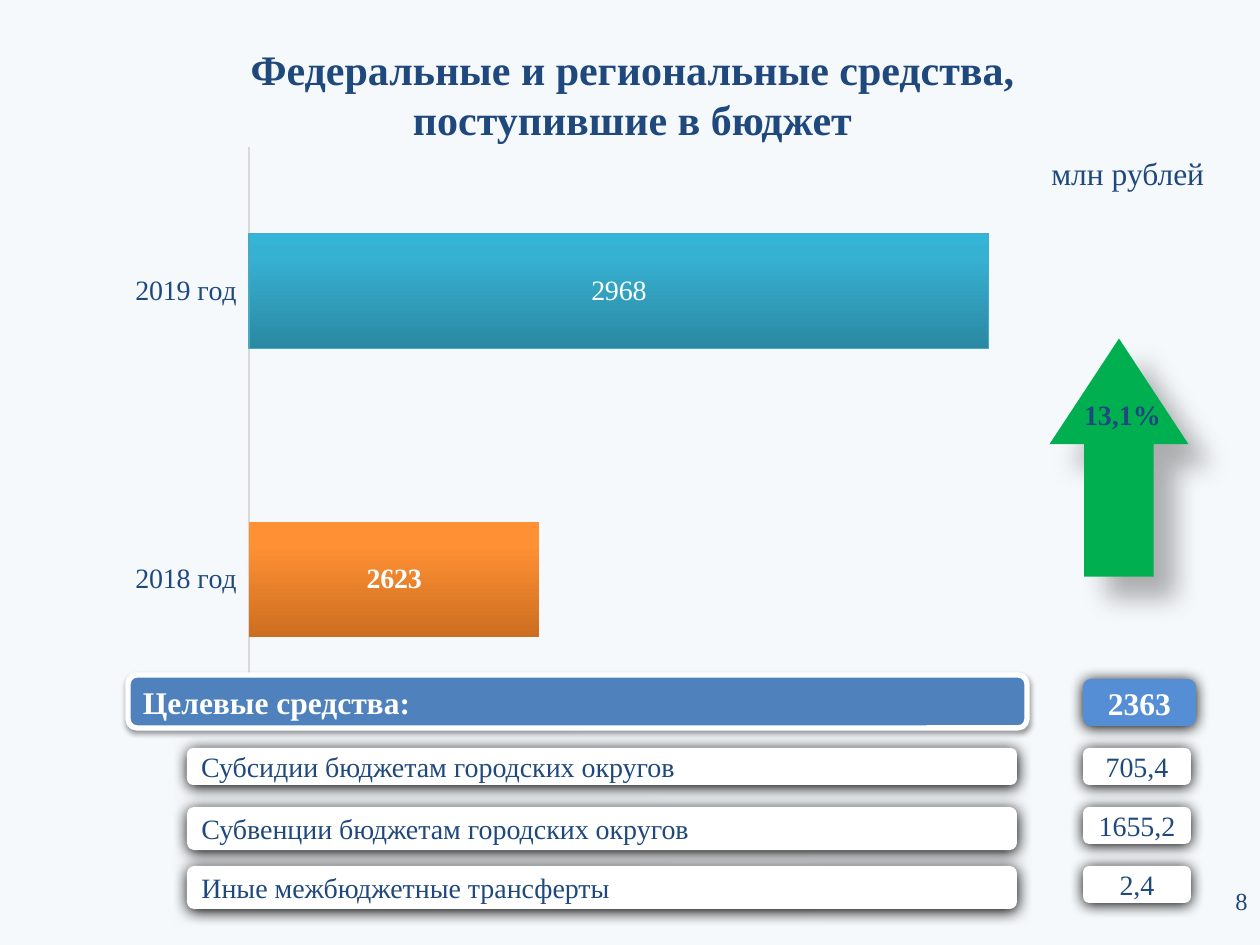
from copy import deepcopy
from dataclasses import dataclass
from typing import NamedTuple, Optional

from lxml.etree import SubElement as Sub
from pptx import Presentation
from pptx.chart.data import CategoryChartData as Data
from pptx.dml.color import RGBColor as Rgb
from pptx.enum.chart import XL_CHART_TYPE as Kind, XL_TICK_LABEL_POSITION as Tick, XL_TICK_MARK as Mark
from pptx.enum.shapes import MSO_SHAPE as Form
from pptx.enum.text import MSO_ANCHOR as Anchor, PP_ALIGN as Align
from pptx.oxml.ns import qn
from pptx.util import Emu, Pt

SCALE = 914400 / 126


@dataclass(frozen=True)
class Theme:
    font: str = "Times New Roman"
    back: str = "F6F9FC"
    navy: str = "1F497D"
    white: str = "FFFFFF"
    blue: str = "4F81BD"
    sky: str = "558ED5"
    green: str = "00B050"
    axis: str = "D9D9D9"
    edge: str = "46AAC5"
    teal: tuple = ("2A88A2", "37B1D2", "34B4D6")
    amber: tuple = ("CC6E20", "FF9034", "FF9136")
    title: int = 24
    head: int = 18
    body: int = 16
    page: int = 14


class Box(NamedTuple):
    left: int
    top: int
    width: int
    height: int


class Shade(NamedTuple):
    alpha: int
    blur: float
    dist: float
    angle: int


class Row(NamedTuple):
    label: str
    value: str
    top: int
    height: int


T = Theme()
SOFT = Shade(38, 3.1, 1.6, 90)
GLOW = Shade(100, 8.5, 1, 90)
DROP = Shade(30, 15, 18, 45)
ROWS = (
    Row("Субсидии бюджетам городских округов", "705,4", 748, 37),
    Row("Субвенции бюджетам городских округов", "1655,2", 807, 43),
    Row("Иные межбюджетные трансферты", "2,4", 866, 43),
)


def px(size: float) -> Emu:
    return Emu(round(size * SCALE))


def place(box: Box) -> list:
    return [px(side) for side in box]


def style(font, size: int, color: str = T.navy, bold: bool = False) -> None:
    font.name, font.size, font.bold = T.font, Pt(size), bold
    font.color.rgb = Rgb.from_string(color)


def write(shape, text: str, *, size: int = T.body, color: str = T.navy,
          bold: bool = False, align=Align.CENTER, anchor=Anchor.MIDDLE,
          space: Optional[float] = None) -> None:
    frame = shape.text_frame
    frame.word_wrap = True
    frame.vertical_anchor = anchor
    for n, line in enumerate(text.split("\n")):
        para = frame.add_paragraph() if n else frame.paragraphs[0]
        para.alignment, para.line_spacing = align, space
        run = para.add_run()
        run.text = line
        style(run.font, size, color, bold)


def label(slide, box: Box, text: str, **form) -> None:
    write(slide.shapes.add_textbox(*place(box)), text, **form)


def cast(shape, shade: Shade) -> None:
    shape.shadow.inherit = False
    root = shape._element.spPr.find(qn("a:effectLst"))
    outer = Sub(root, qn("a:outerShdw"), blurRad=str(Pt(shade.blur)),
                dist=str(Pt(shade.dist)), dir=str(shade.angle * 60000),
                algn="ctr", rotWithShape="0")
    tint = Sub(outer, qn("a:srgbClr"), val="000000")
    Sub(tint, qn("a:alpha"), val=str(shade.alpha * 1000))


def draw(slide, box: Box, fill: str, shade: Shade, form=Form.ROUNDED_RECTANGLE):
    shape = slide.shapes.add_shape(form, *place(box))
    shape.fill.solid()
    shape.fill.fore_color.rgb = Rgb.from_string(fill)
    shape.line.fill.background()
    cast(shape, shade)
    return shape


def blend(series, tones: tuple) -> None:
    fill = series.format.fill
    fill.gradient()
    fill.gradient_angle = 90
    stops = series._element.find(".//" + qn("a:gsLst"))
    stops.append(deepcopy(stops[-1]))
    for stop, spot, tone in zip(fill.gradient_stops, (0, 0.8, 1), tones):
        stop.position = spot
        stop.color.rgb = Rgb.from_string(tone)


def fix(chart, **parts: float) -> None:
    area = chart._chartSpace.chart.plotArea
    for old in area.findall(qn("c:layout")):
        area.remove(old)
    layout = Sub(area, qn("c:layout"))
    area.insert(0, layout)
    hand = Sub(layout, qn("c:manualLayout"))
    modes = {"layoutTarget": "inner", "xMode": "edge", "yMode": "edge"}
    for name, value in {**modes, **parts}.items():
        Sub(hand, qn("c:" + name), val=str(value))


def graph(slide, box: Box) -> None:
    data = Data()
    data.categories = ("2018 год", "2019 год")
    data.add_series("Series 1", (None, 2968))
    data.add_series("Series 2", (2623, None))
    chart = slide.shapes.add_chart(Kind.BAR_STACKED, *place(box), data).chart
    chart.has_legend = chart.has_title = False
    style(chart.font, T.body)
    fix(chart, x=0.136, y=0.02, w=0.844, h=0.96)
    side, scale = chart.category_axis, chart.value_axis
    side.major_tick_mark = Mark.NONE
    side.tick_label_position = Tick.LOW
    style(side.tick_labels.font, T.body)
    side.format.line.color.rgb = Rgb.from_string(T.axis)
    side.format.line.width = Pt(1)
    scale.minimum_scale, scale.maximum_scale = 2400, 3000
    scale.has_major_gridlines = scale.visible = False
    plot = chart.plots[0]
    plot.gap_width, plot.overlap, plot.vary_by_categories = 150, 100, False
    for series, tones in zip(plot.series, (T.teal, T.amber)):
        blend(series, tones)
        marks = series.data_labels
        marks.show_value = True
        style(marks.font, T.body, T.white, True)
    first = plot.series[0]
    first.format.line.color.rgb = Rgb.from_string(T.edge)
    first.format.line.width = Pt(0.75)
    style(first.points[1].data_label.font, T.body, T.white)


def main() -> None:
    deck = Presentation()
    deck.slide_width, deck.slide_height = px(1260), px(945)
    slide = deck.slides.add_slide(deck.slide_layouts[6])
    ground = slide.background.fill
    ground.solid()
    ground.fore_color.rgb = Rgb.from_string(T.back)

    label(slide, Box(5, 37, 1255, 115), "Федеральные и региональные средства,\nпоступившие в бюджет",
          size=T.title, bold=True, anchor=Anchor.TOP)
    label(slide, Box(1039, 155, 179, 44), "млн рублей", size=T.head,
          align=Align.LEFT, anchor=Anchor.TOP, space=0.8)
    graph(slide, Box(123, 135, 926, 601))

    bar = draw(slide, Box(128, 675, 899, 53), T.blue, SOFT)
    bar.line.color.rgb = Rgb.from_string(T.white)
    bar.line.width = Pt(3)
    write(bar, "Целевые средства:", size=T.head, color=T.white, bold=True, align=Align.LEFT)
    total = draw(slide, Box(1083, 679, 113, 47), T.sky, GLOW)
    write(total, "2363", size=T.head, color=T.white, bold=True)
    for row in ROWS:
        name = draw(slide, Box(187, row.top, 830, row.height), T.white, GLOW)
        write(name, row.label, align=Align.JUSTIFY)
        cell = draw(slide, Box(1083, row.top, 108, 37), T.white, GLOW)
        write(cell, row.value)

    arrow = draw(slide, Box(1000, 388, 238, 139), T.green, DROP, Form.RIGHT_ARROW)
    arrow.adjustments[0], arrow.adjustments[1] = 0.5, 0.76
    arrow.rotation = 270
    label(slide, Box(1066, 378, 113, 73), "13,1%", bold=True)
    label(slide, Box(966, 876, 294, 50), "8", size=T.page, align=Align.RIGHT)
    deck.save("out.pptx")


if __name__ == "__main__":
    main()
